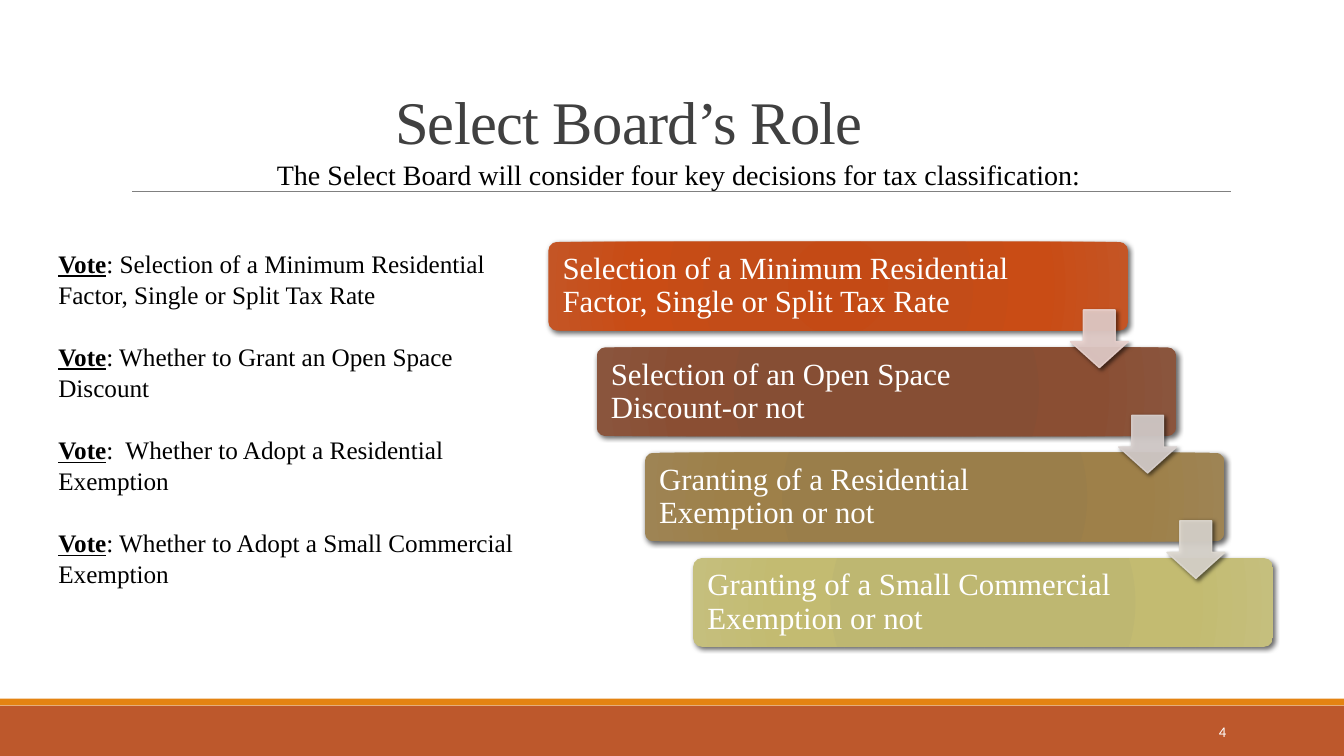
from lxml import etree
from pptx import Presentation
from pptx import util as u
from pptx.dml.color import RGBColor
from pptx.enum import shapes, text
from pptx.oxml import parse_xml
from pptx.oxml.ns import nsdecls, qn

# Grid: 100 columns by 100 rows over the whole slide
WIDTH, HEIGHT = u.Inches(13.33), u.Inches(7.5)
SERIF, SANS = "Times New Roman", "Calibri"

WHITE = RGBColor(0xFF, 0xFF, 0xFF)
BLACK = RGBColor(0, 0, 0)
TITLE_GREY = RGBColor(0x40, 0x40, 0x40)
RULE_GREY = RGBColor(0x80, 0x80, 0x80)
RUST = RGBColor(0xBD, 0x58, 0x2C)
ORANGE = RGBColor(0xE4, 0x83, 0x12)
ARROW_COLOURS = [RGBColor(0xE8, 0xD1, 0xCD), RGBColor(0xD9, 0xD1, 0xCF),
                 RGBColor(0xDE, 0xD9, 0xD1)]

GRADIENT_STOPS = [0, 34, 70, 100]
DECISIONS = [
    ("Selection of a Minimum Residential Factor, Single or Split Tax Rate",
     ["C44A15", "C34C18", "C94C15", "C45525"]),
    ("Selection of an Open Space Discount-or not",
     ["874C32", "864E34", "8A4E33", "8A553D"]),
    ("Granting of a Residential\vExemption or not",
     ["9A7D48", "9A7E4A", "9E8049", "9E8454"]),
    ("Granting of a Small Commercial Exemption or not",
     ["BEB76E", "BEB771", "C3BB71", "C5BF7D"]),
]
VOTES = [
    ": Selection of a Minimum Residential Factor, Single or Split Tax Rate",
    ": Whether to Grant an Open Space Discount",
    ":  Whether to Adopt a Residential Exemption",
    ": Whether to Adopt a Small Commercial Exemption",
]
STEP_RIGHT, STEP_DOWN = 3.59, 13.94


def cols(count):
    return int(WIDTH * count / 100)


def rows(count):
    return int(HEIGHT * count / 100)


def area(left, top, width, height):
    return cols(left), rows(top), cols(width), rows(height)


def write(frame, lines, size, colour, font=SERIF, lead="", align=None,
          anchor=text.MSO_ANCHOR.TOP, spacing=None, before=0, after=0,
          tracking=None):
    """Fill a frame with paragraphs, each opened by an optional bold lead."""
    frame.word_wrap = True
    frame.vertical_anchor = anchor
    for index, line in enumerate(lines):
        para = frame.add_paragraph() if index else frame.paragraphs[0]
        para.alignment = align or text.PP_ALIGN.LEFT
        para.line_spacing = spacing
        para.space_before, para.space_after = u.Pt(before), u.Pt(after)
        if lead:
            para.add_run().text = lead
            para.runs[0].font.bold = para.runs[0].font.underline = True
        # A vertical tab marks a line break inside the paragraph
        for part_index, part in enumerate(line.split("\v")):
            if part_index:
                para.add_line_break()
            para.add_run().text = part
        for span in para.runs:
            span.font.name, span.font.size = font, u.Pt(size)
            span.font.color.rgb = colour
            if tracking is not None:
                span._r.get_or_add_rPr().set("spc", str(tracking))


def add_text(page, place, lines, size, colour, **style):
    box = page.shapes.add_textbox(*area(*place))
    write(box.text_frame, lines, size, colour, **style)


def add_shape(page, kind, place, colour=None):
    shape = page.shapes.add_shape(kind, *area(*place))
    shape.shadow.inherit = False
    shape.line.fill.background()
    if colour is not None:
        shape.fill.solid()
        shape.fill.fore_color.rgb = colour
    return shape


def add_rule(page, left, right, top):
    rule = page.shapes.add_connector(shapes.MSO_CONNECTOR.STRAIGHT, cols(left),
                                     rows(top), cols(right), rows(top))
    rule.line.color.rgb = RULE_GREY
    rule.line.width = u.Pt(0.5)
    etree.SubElement(rule._element.spPr, qn("a:effectLst"))


def cast_shadow(shape, blur):
    effects = shape._element.spPr.find(qn("a:effectLst"))
    effects.append(parse_xml(
        f'<a:outerShdw {nsdecls("a")} blurRad="{u.Pt(blur)}" dist="{u.Pt(2)}" '
        'dir="2700000" algn="tl" rotWithShape="0"><a:srgbClr val="000000">'
        '<a:alpha val="60000"/></a:srgbClr></a:outerShdw>'))


def fill_radial(shape, colours):
    shape.fill.background()
    stops = "".join(
        f'<a:gs pos="{stop * 1000}"><a:srgbClr val="{colour}"/></a:gs>'
        for stop, colour in zip(GRADIENT_STOPS, colours))
    properties = shape._element.spPr
    properties.replace(properties.find(qn("a:noFill")), parse_xml(
        f'<a:gradFill {nsdecls("a")} rotWithShape="1"><a:gsLst>{stops}</a:gsLst>'
        '<a:path path="circle"><a:fillToRect l="100000" t="100000" '
        'r="100000" b="100000"/></a:path></a:gradFill>'))


def add_decision(page, index, label, colours):
    place = (40.8 + index * STEP_RIGHT, 32 + index * STEP_DOWN, 43.13, 11.75)
    box = add_shape(page, shapes.MSO_SHAPE.ROUNDED_RECTANGLE, place)
    box.adjustments[0] = 0.1
    fill_radial(box, colours)
    cast_shadow(box, 3.5)
    frame = box.text_frame
    frame.margin_left, frame.margin_right = cols(0.87), cols(8.2)
    write(frame, [label], 22, WHITE, spacing=0.9,
          anchor=text.MSO_ANCHOR.MIDDLE)


def add_arrow(page, index, colour):
    place = (79.65 + index * STEP_RIGHT, 41 + index * STEP_DOWN, 4.3, 7.63)
    arrow = add_shape(page, shapes.MSO_SHAPE.DOWN_ARROW, place, colour)
    arrow.adjustments[0], arrow.adjustments[1] = 0.55, 0.45
    arrow.line.color.rgb = colour
    arrow.line.width = u.Pt(1)
    for shade in arrow._element.spPr.iter(qn("a:srgbClr")):
        etree.SubElement(shade, qn("a:alpha")).set("val", "90000")
    cast_shadow(arrow, 3)


def main():
    deck = Presentation()
    deck.slide_width, deck.slide_height = WIDTH, HEIGHT
    page = deck.slides.add_slide(deck.slide_layouts[6])

    # Footer bands and heading rule
    add_shape(page, shapes.MSO_SHAPE.RECTANGLE, (0, 93.33, 100, 6.67), RUST)
    add_shape(page, shapes.MSO_SHAPE.RECTANGLE, (0, 92.4, 100, 0.9), ORANGE)
    add_rule(page, 9.83, 91.6, 25.33)

    # Title
    add_text(page, (28.66, 7.33, 39.83, 14.13), ["Select Board’s Role"], 43.2,
             TITLE_GREY, anchor=text.MSO_ANCHOR.BOTTOM, spacing=0.85,
             tracking=-50)

    # Staircase of decisions, with arrows on top
    for index, (label, colours) in enumerate(DECISIONS):
        add_decision(page, index, label, colours)
    for index, colour in enumerate(ARROW_COLOURS):
        add_arrow(page, index, colour)

    # Votes, page number and subtitle
    add_text(page, (3.6, 32, 35.8, 45.73), VOTES, 18, BLACK, lead="Vote",
             spacing=1.04, after=21.6)
    add_text(page, (81.25, 94.13, 10.73, 5.33), ["4"], 10.5, WHITE, font=SANS,
             align=text.PP_ALIGN.RIGHT, anchor=text.MSO_ANCHOR.MIDDLE)
    add_text(page, (14.1, 19.33, 72.84, 7.73),
             ["The Select Board will consider four key decisions for tax "
              "classification:"], 20, BLACK, align=text.PP_ALIGN.CENTER,
             spacing=1.2, before=10, after=6)

    deck.save("out.pptx")


if __name__ == "__main__":
    main()
